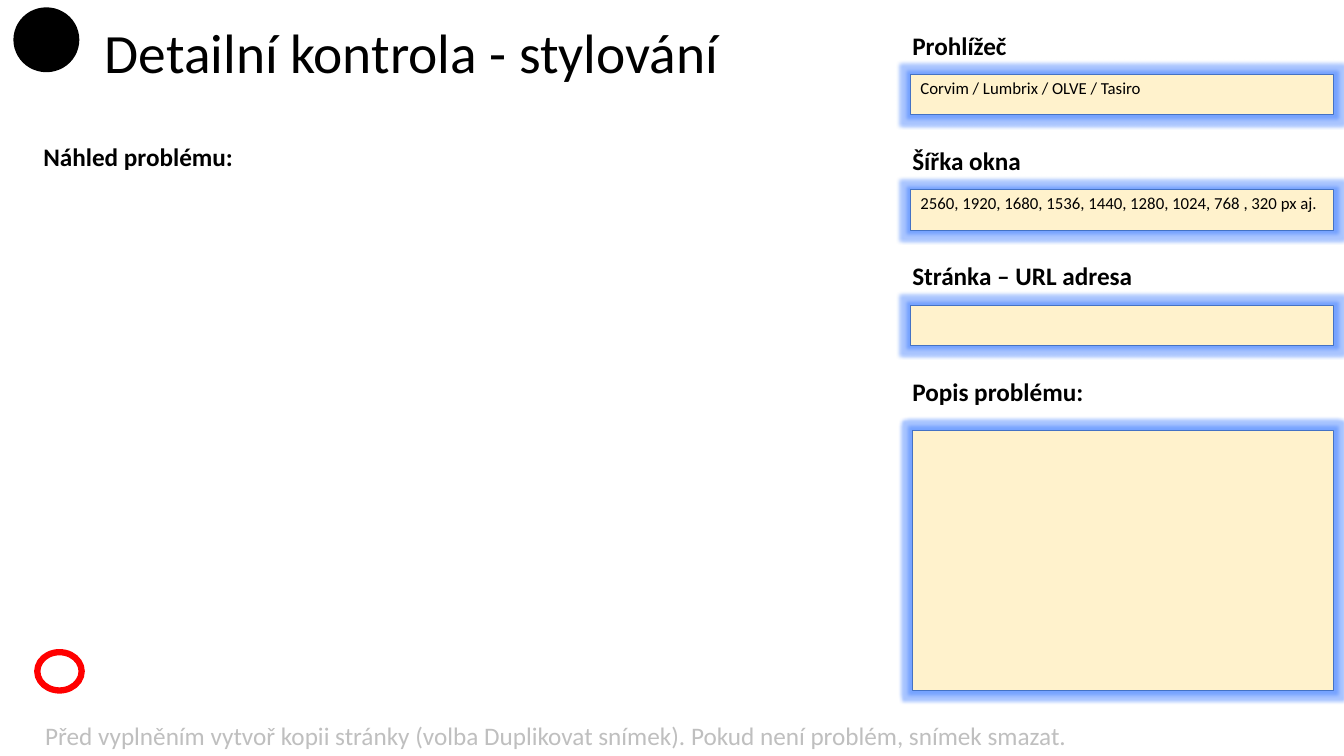
from lxml import etree
from pptx import Presentation
from pptx.dml.color import RGBColor
from pptx.enum import shapes, text
from pptx.oxml import ns
from pptx.util import Inches, Pt

HUES = {
    "ink": "000000",
    "note": "BFBFBF",
    "field": "FFF2CC",
    "edge": "4472C4",
    "glow": "2A70FF",
    "ring": "FF0000",
}
FIELDS = [
    ("Prohlížeč", 1.14, "Corvам / Lumbrix / OLVE / Tasiro".replace("ам", "im")),
    ("Šířka okna", 1.29, "2560, 1920, 1680, 1536, 1440, 1280, 1024, 768 , 320 px aj."),
    ("Stránka – URL adresa", 2.4, ""),
]


def color(name):
    return RGBColor.from_string(HUES[name])


def place(item, box):
    item.left, item.top, item.width, item.height = [Inches(n) for n in box]


def write(item, words, size=18, bold=False, hue="ink", wrap=True,
          anchor=text.MSO_ANCHOR.TOP, lead=None, before=0):
    frame = item.text_frame
    frame.auto_size = text.MSO_AUTO_SIZE.NONE
    frame.word_wrap = wrap
    frame.vertical_anchor = anchor
    para = frame.paragraphs[0]
    para.alignment = text.PP_ALIGN.LEFT
    para.space_before = Pt(before)
    if lead:
        para.line_spacing = lead
    run = para.add_run()
    run.text = words
    run.font.name = "Calibri"
    run.font.size = Pt(size)
    run.font.bold = bold
    run.font.color.rgb = color(hue)
    return para


def label(slide, box, words, **form):
    item = slide.shapes.add_textbox(*[Inches(n) for n in box])
    write(item, words, **form)


def draw(slide, kind, box, fill, line, width):
    item = slide.shapes.add_shape(kind, *[Inches(n) for n in box])
    item.shadow.inherit = False
    if fill:
        item.fill.solid()
        item.fill.fore_color.rgb = color(fill)
    else:
        item.fill.background()
    item.line.color.rgb = color(line)
    item.line.width = Pt(width)
    return item


def field(slide, box, words=""):
    item = draw(slide, shapes.MSO_SHAPE.RECTANGLE, box, "field", "edge", 0.75)
    effects = item._element.spPr.find(ns.qn("a:effectLst"))
    glow = etree.SubElement(effects, ns.qn("a:glow"), rad=str(Inches(0.07)))
    tint = etree.SubElement(glow, ns.qn("a:srgbClr"), val=HUES["glow"])
    etree.SubElement(tint, ns.qn("a:alpha"), val="40000")
    if words:
        write(item, words, size=12, lead=0.9, before=10)


def header(slide, box):
    left, top, width, height = box
    title = slide.shapes.title
    place(title, (left + 0.8, top + 0.17, width - 0.8, height - 0.17))
    write(title, "Detailní kontrola - stylování", size=39.6, lead=0.9,
          anchor=text.MSO_ANCHOR.MIDDLE)
    draw(slide, shapes.MSO_SHAPE.OVAL, (left, top, 0.64, 0.63), "ink", "ink", 1)


def preview(slide, box):
    left, top, width, height = box
    body = slide.placeholders[1]
    place(body, (left, top, width, 0.4))
    para = write(body, "Náhled problému:", bold=True, lead=0.9, before=10)
    props = para._p.get_or_add_pPr()
    props.set("marL", "0")
    props.set("indent", "0")
    etree.SubElement(props, ns.qn("a:buNone"))
    draw(slide, shapes.MSO_SHAPE.OVAL,
         (left + 0.04, top + height - 0.38, 0.44, 0.38), None, "ring", 4.5)


def form(slide, box):
    left, top, width, height = box
    step = 3.43 / len(FIELDS)
    for row, (name, span, words) in enumerate(FIELDS):
        y = top + row * step
        field(slide, (left + 0.08, y + 0.49, width - 0.08, 0.4), words)
        label(slide, (left, y, span, 0.4), name, bold=True, wrap=False)
    label(slide, (left, top + 3.43, 1.92, 0.4), "Popis problému:",
          bold=True, wrap=False)
    field(slide, (left + 0.1, top + 4.02, width - 0.1, height - 4.02))


def footer(slide, box):
    label(slide, box, "Před vyplněním vytvoř kopii stránky (volba Duplikovat "
          "snímek). Pokud není problém, snímek smazat.", hue="note")


def main():
    deck = Presentation()
    deck.slide_width = Inches(13.33)
    deck.slide_height = Inches(7.5)
    slide = deck.slides.add_slide(deck.slide_layouts[1])
    header(slide, (0.14, 0.08, 8.75, 0.77))
    preview(slide, (0.33, 1.39, 8.27, 5.46))
    form(slide, (8.95, 0.25, 4.28, 6.6))
    footer(slide, (0.35, 7.1, 10.45, 0.4))
    deck.save("out.pptx")


if __name__ == "__main__":
    main()
